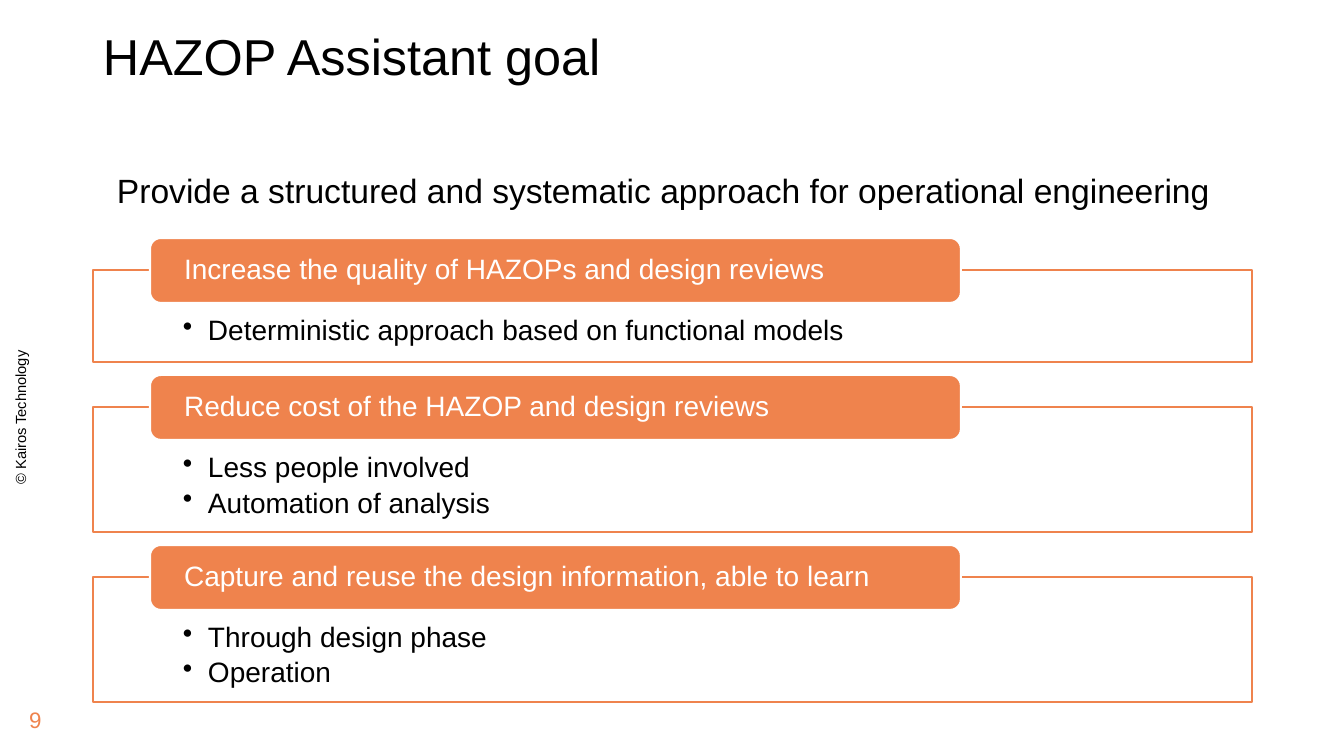
import pptx
import pptx.util
import pptx.dml.color
import pptx.enum.shapes
import pptx.enum.text
import pptx.oxml.ns
import lxml.etree

SCALE = 914400 / 100.8
ORANGE, WHITE, BLACK = "EF834D", "FFFFFF", "000000"
SHAPES = pptx.enum.shapes.MSO_SHAPE
MIDDLE = pptx.enum.text.MSO_ANCHOR.MIDDLE


def add_box(preset, left, top, width, height, insets=(10, 5, 10, 5), fill=None, line=None, line_width=1):
    position = [round(value * SCALE) for value in (left, top, width, height)]
    if preset is None:
        shape = slide.shapes.add_textbox(*position)
    else:
        shape = slide.shapes.add_shape(preset, *position)
        shape.shadow.inherit = False
        shape.fill.solid()
        shape.fill.fore_color.rgb = pptx.dml.color.RGBColor.from_string(fill)
        shape.line.color.rgb = pptx.dml.color.RGBColor.from_string(line)
        shape.line.width = pptx.util.Pt(line_width)
    frame = shape.text_frame
    frame.word_wrap = True
    frame.vertical_anchor = pptx.enum.text.MSO_ANCHOR.TOP
    frame.margin_left, frame.margin_top, frame.margin_right, frame.margin_bottom = [
        round(inset * SCALE) for inset in insets]
    return shape


def write(paragraph, text, size, color, spacing=0.9, after=0, bullet=False):
    paragraph.alignment = pptx.enum.text.PP_ALIGN.LEFT
    paragraph.line_spacing = spacing
    paragraph.space_after = pptx.util.Pt(after)
    if bullet:
        properties = paragraph._p.get_or_add_pPr()
        properties.set("marL", str(round(25 * SCALE)))
        properties.set("indent", str(round(-25 * SCALE)))
        mark = lxml.etree.SubElement(properties, pptx.oxml.ns.qn("a:buChar"))
        mark.set("char", "•")
    run = paragraph.add_run()
    run.text = text
    run.font.name = "Arial"
    run.font.size = pptx.util.Pt(size)
    run.font.color.rgb = pptx.dml.color.RGBColor.from_string(color)


presentation = pptx.Presentation()
presentation.slide_width = round(1344 * SCALE)
presentation.slide_height = round(756 * SCALE)
slide = presentation.slides.add_slide(presentation.slide_layouts[6])

copyright_line = add_box(None, -60, 400, 161, 28)
copyright_line.rotation = 270
write(copyright_line.text_frame.paragraphs[0], "© Kairos Technology", 10.5, BLACK, spacing=1.0)

page_number = add_box(None, 19, 700, 51, 40)
page_number.text_frame.vertical_anchor = MIDDLE
write(page_number.text_frame.paragraphs[0], "9", 16, ORANGE, spacing=1.0)

goals = [
    ("Increase the quality of HAZOPs and design reviews", 92,
     ["Deterministic approach based on functional models"]),
    ("Reduce cost of the HAZOP and design reviews", 125,
     ["Less people involved", "Automation of analysis"]),
    ("Capture and reuse the design information, able to learn", 125,
     ["Through design phase", "Operation"]),
]
panel_top = 270
for heading, panel_height, points in goals:
    panel = add_box(SHAPES.RECTANGLE, 93, panel_top, 1159, panel_height, (90, 46, 90, 16), WHITE, ORANGE)
    for index, point in enumerate(points):
        frame = panel.text_frame
        paragraph = frame.add_paragraph() if index else frame.paragraphs[0]
        write(paragraph, point, 20, BLACK, after=4, bullet=True)
    header = add_box(SHAPES.ROUNDED_RECTANGLE, 150, panel_top - 32, 811, 65, (31, 0, 31, 0), ORANGE, WHITE, 1.5)
    header.text_frame.vertical_anchor = MIDDLE
    write(header.text_frame.paragraphs[0], heading, 20, WHITE)
    panel_top += panel_height + 45

title = add_box(None, 93, 1, 1159, 117)
title.text_frame.vertical_anchor = MIDDLE
write(title.text_frame.paragraphs[0], "HAZOP Assistant goal", 36, BLACK)

summary = add_box(None, 107, 169, 1130, 46)
write(summary.text_frame.paragraphs[0],
      "Provide a structured and systematic approach for operational engineering", 24, BLACK, after=6)

presentation.save("out.pptx")
